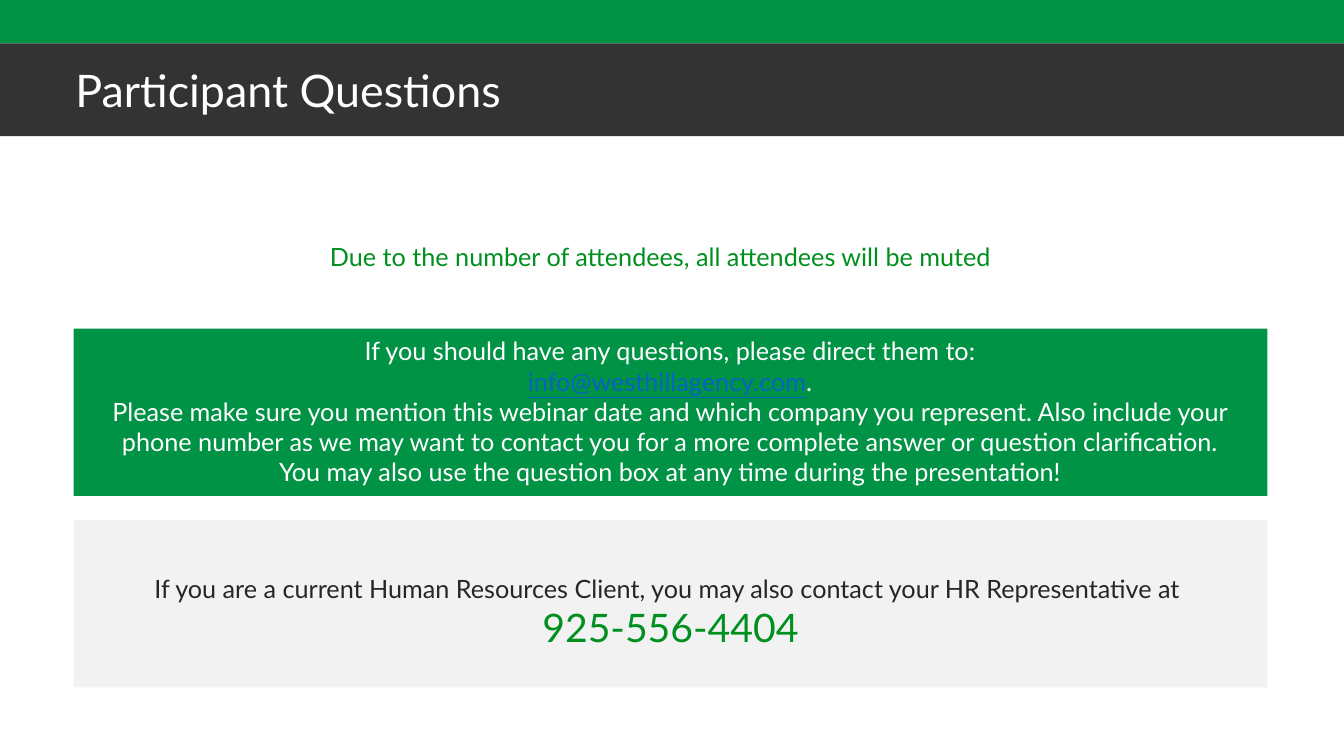
from dataclasses import dataclass

from pptx import Presentation
from pptx.dml.color import RGBColor as RGB
from pptx.enum.shapes import MSO_SHAPE as Preset
from pptx.enum.text import MSO_AUTO_SIZE as AutoSize, PP_ALIGN as Align
from pptx.slide import Slide
from pptx.util import Inches, Pt


@dataclass(frozen=True)
class Theme:
    font: str = "Lato"
    green: RGB = RGB(0x00, 0x93, 0x45)
    accent: RGB = RGB(0x00, 0x90, 0x1F)
    charcoal: RGB = RGB(0x33, 0x33, 0x33)
    pale: RGB = RGB(0xF2, 0xF2, 0xF2)
    ink: RGB = RGB(0x26, 0x26, 0x26)
    link: RGB = RGB(0x05, 0x63, 0xC1)
    white: RGB = RGB(0xFF, 0xFF, 0xFF)
    title_size: int = 32
    phone_size: int = 28
    body_size: int = 18


THEME = Theme()


@dataclass(frozen=True)
class Box:
    left: float
    top: float
    width: float
    height: float

    def emu(self) -> list[Inches]:
        return [Inches(v) for v in (self.left, self.top, self.width, self.height)]


@dataclass(frozen=True)
class Panel:
    box: Box
    color: RGB


@dataclass(frozen=True)
class Span:
    text: str
    color: RGB | None = None
    size: int | None = None
    underline: bool = False
    new_line: bool = False


SLIDE_W, SLIDE_H = 13.33, 7.5
STRIPE_H, HEADER_H = 0.43, 0.92
PANEL_X, PANEL_W, PANEL_H = 0.73, 11.84, 1.66
QUESTIONS_Y, PANEL_STEP = 3.26, 1.9

PANELS = [
    Panel(Box(0, 0, SLIDE_W, STRIPE_H), THEME.green),
    Panel(Box(0, STRIPE_H, SLIDE_W, HEADER_H), THEME.charcoal),
    Panel(Box(PANEL_X, QUESTIONS_Y, PANEL_W, PANEL_H), THEME.green),
    Panel(Box(PANEL_X, QUESTIONS_Y + PANEL_STEP, PANEL_W, PANEL_H), THEME.pale),
]

HR_CONTACT = [[
    Span("If you are a current Human Resources Client, you may also contact "
         "your HR Representative at "),
    Span("925-556-4404", THEME.accent, THEME.phone_size, new_line=True),
]]

QUESTIONS = [
    [Span("If you should have any questions, please direct them to:")],
    [Span("info@westhillagency.com", THEME.link, underline=True), Span(".")],
    [Span("Please make sure you mention this webinar date and which company you "
          "represent. Also include your phone number as we may want to contact you "
          "for a more complete answer or question clarification.")],
    [Span("You may also use the question box at any time during the presentation!")],
]


def add_panel(slide: Slide, panel: Panel) -> None:
    rect = slide.shapes.add_shape(Preset.RECTANGLE, *panel.box.emu())
    rect.shadow.inherit = False
    rect.fill.solid()
    rect.fill.fore_color.rgb = panel.color
    rect.line.fill.background()


def add_text(slide: Slide, box: Box, paragraphs: list[list[Span]], *, color: RGB,
             size: int = THEME.body_size, align: Align = Align.CENTER) -> None:
    frame = slide.shapes.add_textbox(*box.emu()).text_frame
    frame.word_wrap = True
    frame.auto_size = AutoSize.SHAPE_TO_FIT_TEXT
    for index, spans in enumerate(paragraphs):
        paragraph = frame.add_paragraph() if index else frame.paragraphs[0]
        paragraph.alignment = align
        for span in spans:
            if span.new_line:
                paragraph.add_line_break()
            run = paragraph.add_run()
            run.text = span.text
            run.font.name = THEME.font
            run.font.size = Pt(span.size or size)
            run.font.color.rgb = span.color or color
            run.font.underline = span.underline


def main() -> None:
    deck = Presentation()
    deck.slide_width, deck.slide_height = Inches(SLIDE_W), Inches(SLIDE_H)
    slide = deck.slides.add_slide(deck.slide_layouts[6])

    # Header bands and content panels
    for panel in PANELS:
        add_panel(slide, panel)

    # Title
    add_text(slide, Box(0.65, 0.57, 11.6, 0.64), [[Span("Participant Questions")]],
             color=THEME.white, size=THEME.title_size, align=Align.LEFT)

    # Contact details, muting notice and question instructions
    add_text(slide, Box(1.07, 5.64, 11.16, 0.88), HR_CONTACT, color=THEME.ink)
    add_text(slide, Box(1.99, 2.34, 9.12, 0.4),
             [[Span("Due to the number of attendees, all attendees will be muted")]],
             color=THEME.accent)
    add_text(slide, Box(0.84, 3.28, 11.61, 1.62), QUESTIONS, color=THEME.white)

    deck.save("out.pptx")


if __name__ == "__main__":
    main()
